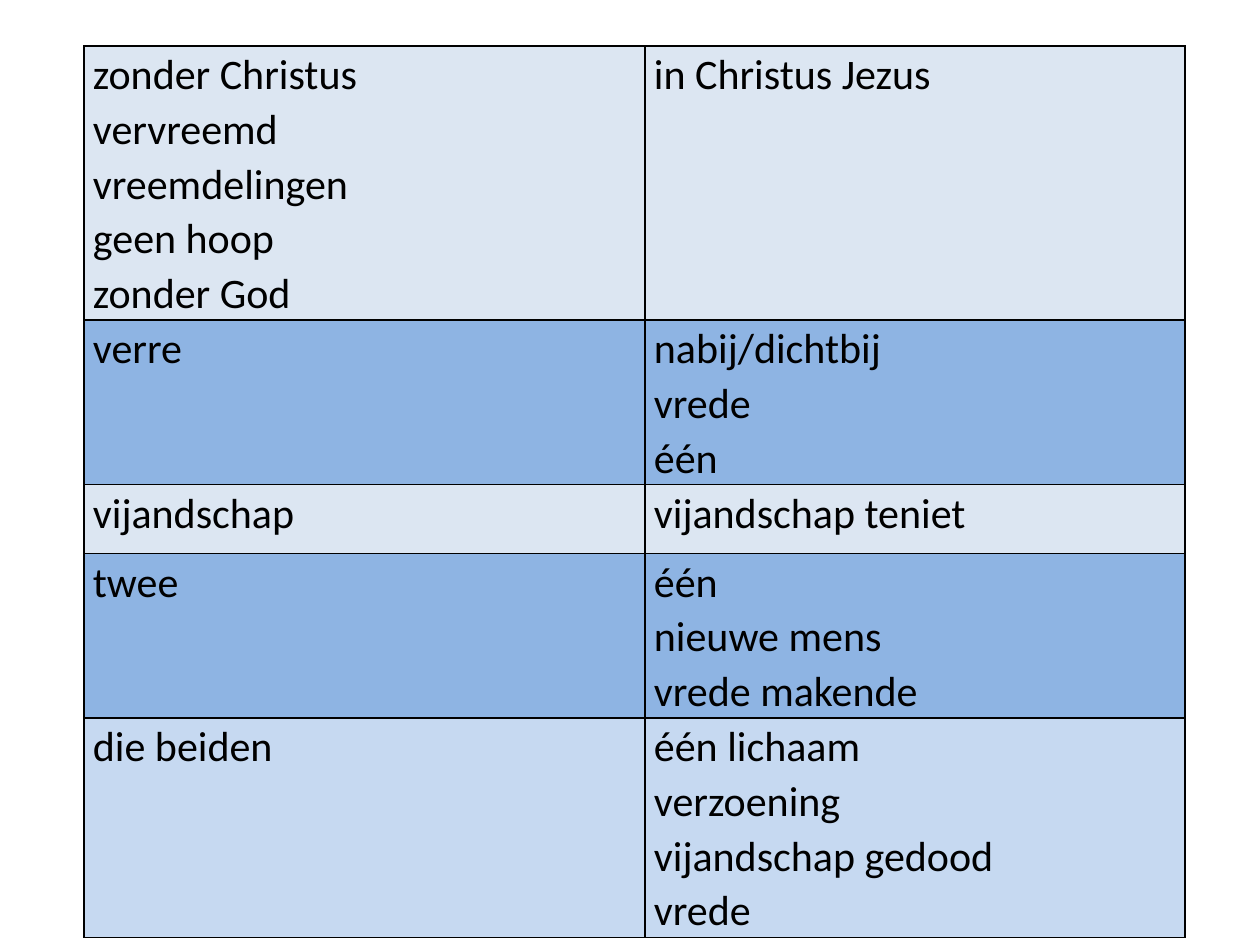
"""Build a slide with a two-column table of contrasting phrases."""
from dataclasses import dataclass

from lxml import etree
from pptx import Presentation
from pptx.dml.color import RGBColor
from pptx.oxml.ns import qn
from pptx.table import _Cell
from pptx.util import Emu, Pt

PALE = RGBColor(0xDC, 0xE6, 0xF2)
BLUE = RGBColor(0x8E, 0xB4, 0xE3)
LIGHT = RGBColor(0xC6, 0xD9, 0xF1)
BLACK = RGBColor(0, 0, 0)
FONT = "Calibri"
FONT_SIZE = Pt(24)
LINE_SPACING = 1.07
BORDER_WIDTH = Pt(1)
BORDER_SIDES = ("a:lnL", "a:lnR", "a:lnT", "a:lnB")
COLUMN_WIDTHS = (561, 540)
TABLE_LEFT, TABLE_TOP = 84, 46
CELL_INSET = 9


@dataclass(frozen=True)
class Contrast:
    before: tuple[str, ...]
    after: tuple[str, ...]
    height: int
    fill: RGBColor


CONTRASTS = (
    Contrast(
        ("zonder Christus", "vervreemd", "vreemdelingen", "geen hoop", "zonder God"),
        ("in Christus Jezus",), 248, PALE),
    Contrast(("verre",), ("nabij/dichtbij", "vrede", "één"), 149, BLUE),
    Contrast(("vijandschap",), ("vijandschap teniet",), 69, PALE),
    Contrast(("twee",), ("één", "nieuwe mens", "vrede makende"), 149, BLUE),
    Contrast(
        ("die beiden",),
        ("één lichaam", "verzoening", "vijandschap gedood", "vrede"), 208, LIGHT),
)


def px(length: int) -> Emu:
    """Turn pixels at 126 to the inch into EMU."""
    return Emu(round(length * 914400 / 126))


def add_borders(cell: _Cell) -> None:
    """Draw a thin black line on all four sides of a cell."""
    properties = cell._tc.get_or_add_tcPr()
    for index, side in enumerate(BORDER_SIDES):
        line = etree.Element(qn(side), w=str(int(BORDER_WIDTH)))
        fill = etree.SubElement(line, qn("a:solidFill"))
        etree.SubElement(fill, qn("a:srgbClr"), val=str(BLACK))
        properties.insert(index, line)


def fill_cell(cell: _Cell, phrases: tuple[str, ...], color: RGBColor) -> None:
    """Give a cell its colour, borders and one paragraph per phrase."""
    cell.fill.solid()
    cell.fill.fore_color.rgb = color
    cell.margin_left = cell.margin_right = px(CELL_INSET)
    cell.margin_top = cell.margin_bottom = 0
    add_borders(cell)
    frame = cell.text_frame
    for index, phrase in enumerate(phrases):
        para = frame.add_paragraph() if index else frame.paragraphs[0]
        para.line_spacing = LINE_SPACING
        span = para.add_run()
        span.text = phrase
        span.font.name = FONT
        span.font.size = FONT_SIZE
        span.font.bold = False
        span.font.color.rgb = BLACK


def main() -> None:
    """Create the deck and save it."""
    deck = Presentation()
    deck.slide_width, deck.slide_height = px(1260), px(945)
    page = deck.slides.add_slide(deck.slide_layouts[6])
    total_height = sum(contrast.height for contrast in CONTRASTS)
    table = page.shapes.add_table(
        len(CONTRASTS), len(COLUMN_WIDTHS), px(TABLE_LEFT), px(TABLE_TOP),
        px(sum(COLUMN_WIDTHS)), px(total_height)).table
    table.first_row = table.horz_banding = False
    for column, width in zip(table.columns, COLUMN_WIDTHS):
        column.width = px(width)
    for row, contrast in zip(table.rows, CONTRASTS):
        row.height = px(contrast.height)
        for cell, phrases in zip(row.cells, (contrast.before, contrast.after)):
            fill_cell(cell, phrases, contrast.fill)
    deck.save("out.pptx")


if __name__ == "__main__":
    main()
